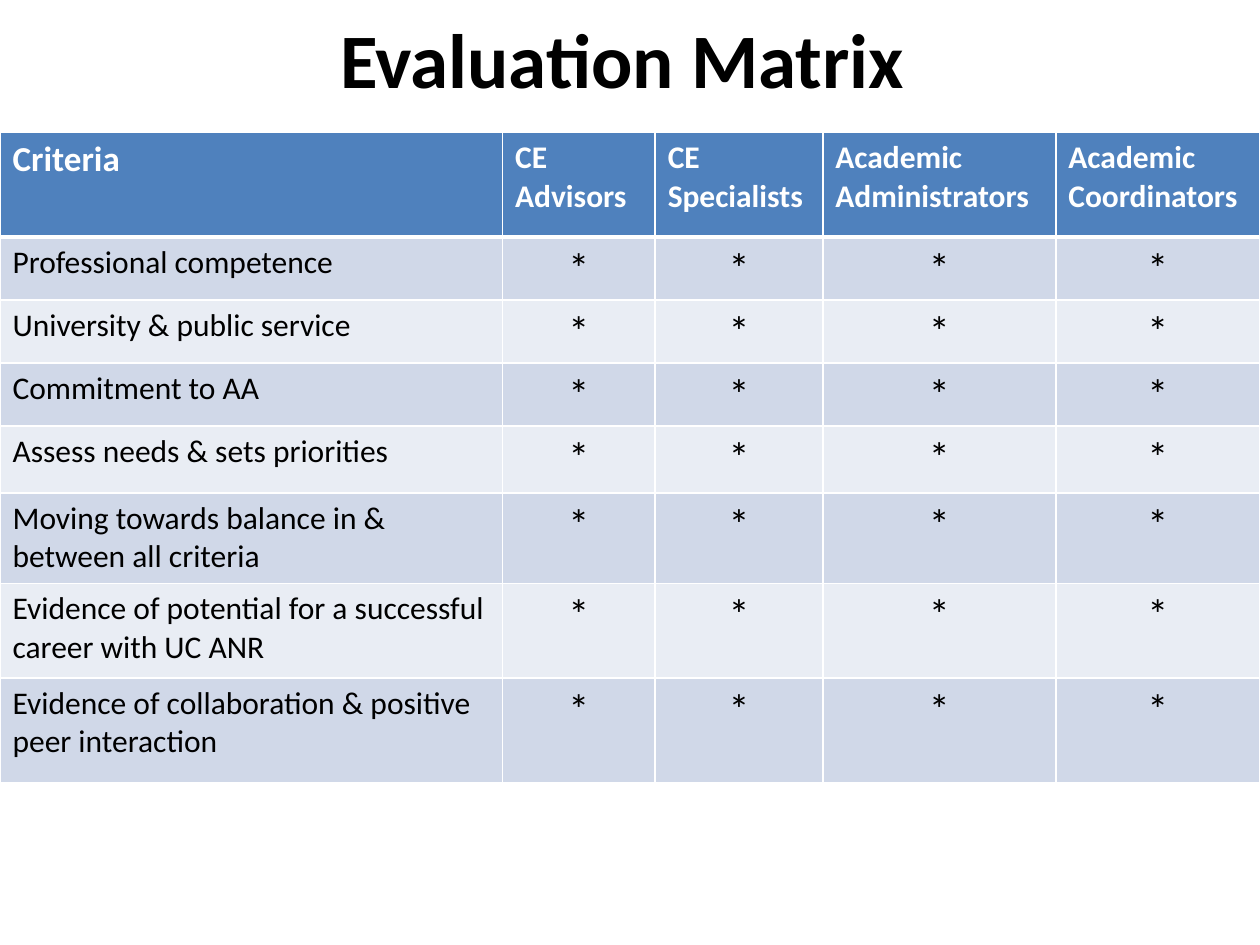
from dataclasses import dataclass

from lxml.etree import SubElement
from pptx import Presentation
from pptx.dml.color import RGBColor
from pptx.enum.text import MSO_AUTO_SIZE, PP_ALIGN
from pptx.oxml.ns import qn
from pptx.util import Pt

BLACK = RGBColor(0x00, 0x00, 0x00)
WHITE = RGBColor(0xFF, 0xFF, 0xFF)
BLUE = RGBColor(0x4F, 0x81, 0xBD)
BANDS = RGBColor(0xD0, 0xD8, 0xE8), RGBColor(0xE9, 0xED, 0xF4)


@dataclass(frozen=True)
class Look:
    size: float
    color: RGBColor = BLACK
    bold: bool = False
    align: PP_ALIGN = PP_ALIGN.LEFT


TITLE = Look(44, bold=True)
FIRST = Look(20, WHITE, True)
HEAD = Look(18, WHITE, True)
LABEL = Look(18)
MARK = Look(24, align=PP_ALIGN.CENTER)

HEADS = ["Criteria", "CE Advisors", "CE Specialists",
         "Academic Administrators", "Academic Coordinators"]
LABELS = [
    "Professional competence",
    "University & public service",
    "Commitment to AA",
    "Assess needs & sets priorities",
    "Moving towards balance in & between all criteria",
    "Evidence of potential for a successful career with UC ANR",
    "Evidence of collaboration & positive peer interaction",
]
WIDTHS = [287.2, 87.2, 95.8, 133.2, 116.6]
HEIGHTS = [59.8, 36, 36, 33.8, 38.2, 51.8, 54, 59.8]


def write(frame, text: str, look: Look) -> None:
    para = frame.paragraphs[0]
    para.alignment = look.align
    run = para.add_run()
    run.text = text
    form = {"name": "Calibri", "size": Pt(look.size), "bold": look.bold}
    for key, value in form.items():
        setattr(run.font, key, value)
    run.font.color.rgb = look.color


def edge(cell, top: float, bottom: float) -> None:
    """Give the cell white borders; must run before the fill is set."""
    props = cell._tc.get_or_add_tcPr()
    sides = {"a:lnL": 1, "a:lnR": 1, "a:lnT": top, "a:lnB": bottom}
    for tag, width in sides.items():
        line = SubElement(props, qn(tag), w=str(Pt(width)))
        fill = SubElement(line, qn("a:solidFill"))
        SubElement(fill, qn("a:srgbClr"), val=str(WHITE))


def add_title(slide) -> None:
    box = slide.shapes.add_textbox(Pt(187.2), Pt(2.9), Pt(524.9), Pt(60.5))
    box.text_frame.word_wrap = True
    box.text_frame.auto_size = MSO_AUTO_SIZE.SHAPE_TO_FIT_TEXT
    write(box.text_frame, "Evaluation Matrix", TITLE)


def add_matrix(slide) -> None:
    rows = [HEADS] + [[label] + ["*"] * (len(HEADS) - 1) for label in LABELS]
    table = slide.shapes.add_table(
        len(rows), len(HEADS), Pt(0), Pt(75.6),
        Pt(sum(WIDTHS)), Pt(sum(HEIGHTS))).table
    for col, width in zip(table.columns, WIDTHS):
        col.width = Pt(width)
    for row, height in zip(table.rows, HEIGHTS):
        row.height = Pt(height)
    for r, texts in enumerate(rows):
        looks = (FIRST, HEAD) if r == 0 else (LABEL, MARK)
        for c, text in enumerate(texts):
            cell = table.cell(r, c)
            edge(cell, 3 if r == 1 else 1, 3 if r == 0 else 1)
            cell.fill.solid()
            cell.fill.fore_color.rgb = BANDS[(r - 1) % 2] if r else BLUE
            write(cell.text_frame, text, looks[min(c, 1)])


def main() -> None:
    deck = Presentation()
    deck.slide_width, deck.slide_height = Pt(720), Pt(540)
    slide = deck.slides.add_slide(deck.slide_layouts[6])
    add_title(slide)
    add_matrix(slide)
    deck.save("out.pptx")


if __name__ == "__main__":
    main()
